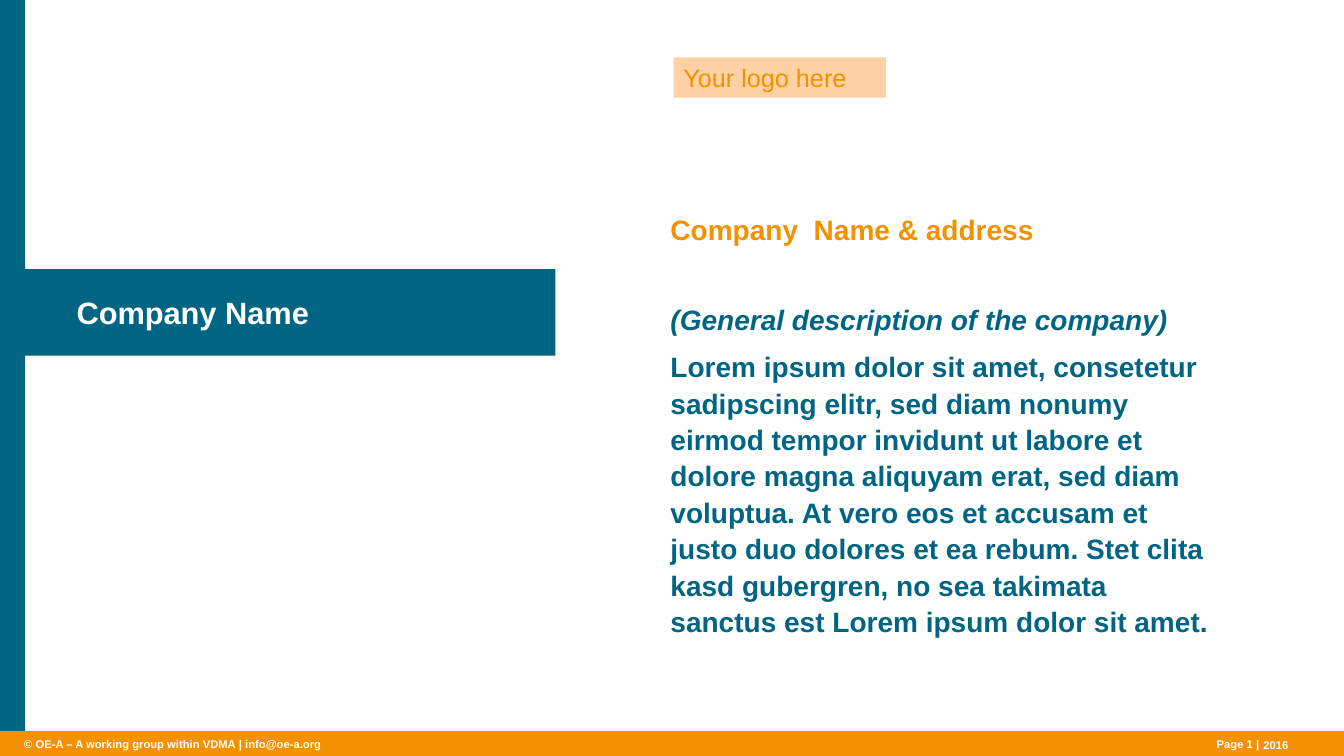
from dataclasses import dataclass
from typing import Optional

from pptx import Presentation
from pptx.dml.color import RGBColor
from pptx.enum.shapes import MSO_SHAPE
from pptx.enum.text import MSO_ANCHOR as Anchor, MSO_AUTO_SIZE as AutoSize, PP_ALIGN as Align
from pptx.slide import Slide
from pptx.util import Inches, Pt

TEAL = RGBColor(0x00, 0x65, 0x82)
ORANGE = RGBColor(0xF4, 0x91, 0x00)
PEACH = RGBColor(0xFF, 0xD2, 0xA5)
WHITE = RGBColor(0xFF, 0xFF, 0xFF)

SLIDE_WIDTH, SLIDE_HEIGHT = 13.33, 7.5
BAR = 0.25
COLUMN_LEFT, COLUMN_WIDTH = 6.65, 5.36
FOOTER_TOP, FOOTER_HEIGHT = 7.32, 0.13
NO_INSETS = (0, 0, 0, 0)

DESCRIPTION = (
    "Lorem ipsum dolor sit amet, consetetur sadipscing elitr, sed diam nonumy "
    "eirmod tempor invidunt ut labore et dolore magna aliquyam erat, sed diam "
    "voluptua. At vero eos et accusam et justo duo dolores et ea rebum. Stet clita "
    "kasd gubergren, no sea takimata sanctus est Lorem ipsum dolor sit amet."
)


@dataclass(frozen=True)
class Line:
    text: str
    italic: bool = False


@dataclass(frozen=True)
class Block:
    left: float
    top: float
    width: float
    height: float
    lines: tuple[Line, ...] = ()
    fill: Optional[RGBColor] = None
    color: RGBColor = WHITE
    size: int = 8
    bold: bool = True
    insets: tuple[float, float, float, float] = NO_INSETS
    anchor: Anchor = Anchor.TOP
    align: Align = Align.LEFT
    wrap: bool = True
    grow: bool = True
    spacing: Optional[int] = None


def footer(text: str, left: float, width: float, wrap: bool = False,
           align: Align = Align.LEFT, anchor: Anchor = Anchor.MIDDLE) -> Block:
    return Block(left, FOOTER_TOP, width, FOOTER_HEIGHT, (Line(text),),
                 wrap=wrap, align=align, anchor=anchor)


BLOCKS = (
    Block(0, 0, BAR, SLIDE_HEIGHT, fill=TEAL),
    Block(0, SLIDE_HEIGHT - BAR, SLIDE_WIDTH, BAR, fill=ORANGE),
    footer("© OE-A – A working group within VDMA", 0.24, 2.13),
    Block(COLUMN_LEFT, 2.11, COLUMN_WIDTH, 0.34, (Line("Company  Name & address"),),
          color=ORANGE, size=20),
    footer("| info@oe-a.org", 2.37, 3.85, wrap=True),
    Block(BAR, 2.67, 5.26, 0.86, (Line("Company Name"),), fill=TEAL, size=22,
          insets=(0.51, 0.08, 0.16, 0.08), anchor=Anchor.MIDDLE, grow=False, spacing=26),
    footer("Page 1 |", 11.9, 0.59, align=Align.RIGHT),
    Block(COLUMN_LEFT, 2.97, COLUMN_WIDTH, 3.78,
          (Line("(General description of the company)", italic=True), Line(DESCRIPTION)),
          color=TEAL, size=20, grow=False, spacing=26),
    Block(6.68, 0.57, 2.11, 0.4, (Line("Your logo here"),), fill=PEACH, color=ORANGE,
          size=18, bold=False, insets=(0.1, 0.05, 0.1, 0.05)),
    footer("2016", 12.53, 0.57, anchor=Anchor.TOP),
)


def add_block(slide: Slide, block: Block) -> None:
    bounds = [Inches(value) for value in (block.left, block.top, block.width, block.height)]
    if block.fill is None:
        shape = slide.shapes.add_textbox(*bounds)
    else:
        shape = slide.shapes.add_shape(MSO_SHAPE.RECTANGLE, *bounds)
        shape.shadow.inherit = False
        shape.fill.solid()
        shape.fill.fore_color.rgb = block.fill
        shape.line.fill.background()
    if block.lines:
        write_lines(shape.text_frame, block)


def write_lines(frame, block: Block) -> None:
    frame.word_wrap = block.wrap
    frame.auto_size = AutoSize.SHAPE_TO_FIT_TEXT if block.grow else AutoSize.NONE
    frame.vertical_anchor = block.anchor
    (frame.margin_left, frame.margin_top,
     frame.margin_right, frame.margin_bottom) = map(Inches, block.insets)
    for index, line in enumerate(block.lines):
        paragraph = frame.add_paragraph() if index else frame.paragraphs[0]
        paragraph.alignment = block.align
        if block.spacing:
            paragraph.line_spacing = Pt(block.spacing)
        if index:
            paragraph.space_before = Pt(8)
        run = paragraph.add_run()
        run.text = line.text
        run.font.name = "Arial"
        run.font.size = Pt(block.size)
        run.font.bold = block.bold
        run.font.italic = line.italic
        run.font.color.rgb = block.color


def main() -> None:
    presentation = Presentation()
    presentation.slide_width = Inches(SLIDE_WIDTH)
    presentation.slide_height = Inches(SLIDE_HEIGHT)
    slide = presentation.slides.add_slide(presentation.slide_layouts[6])
    for block in BLOCKS:
        add_block(slide, block)
    presentation.save("out.pptx")


if __name__ == "__main__":
    main()
